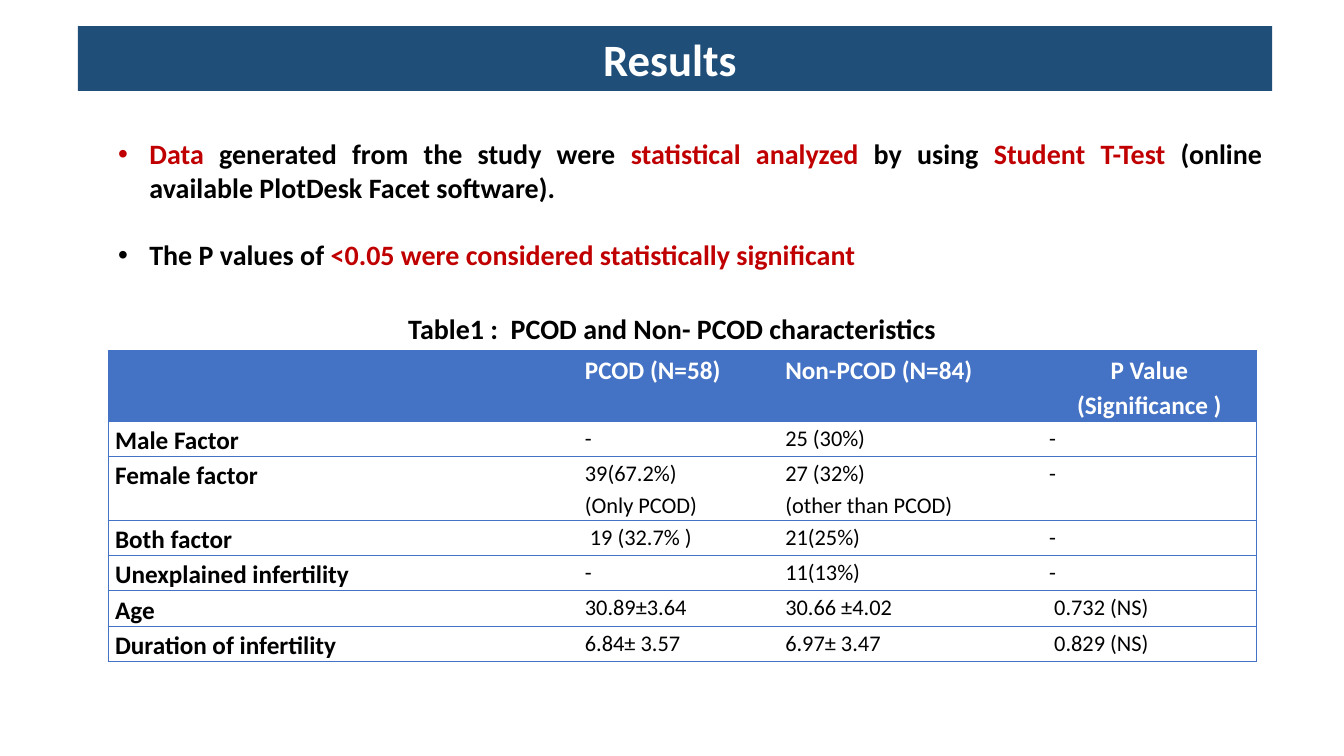
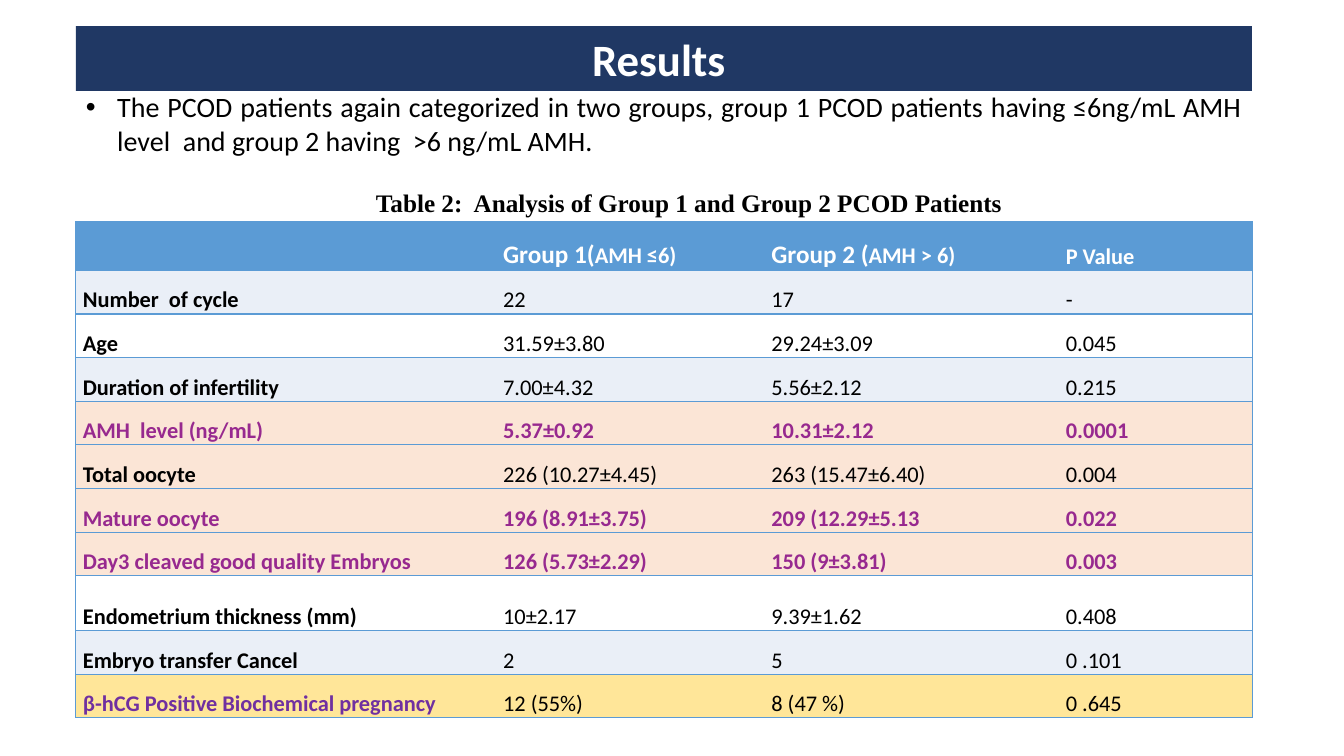
from lxml import etree
from pptx import Presentation
from pptx.dml import color as colors
from pptx.enum import text as text_enum
from pptx.oxml import ns
from pptx.util import Cm, Pt

# Shared look
FONT = "Calibri"
BLACK, WHITE, RED = "000000", "FFFFFF", "C00000"
PURPLE, VIOLET = "97298F", "7030A0"
PALE_BLUE, PEACH, YELLOW = "EAEFF7", "FBE5D6", "FFE699"
BLUE, SKY = "4472C4", "5B9BD5"
PLAIN_TABLE_STYLE = "{2D5ABB26-0587-4C30-8999-92F81FD0307C}"
ALIGN, ANCHOR = text_enum.PP_ALIGN, text_enum.MSO_ANCHOR
BULLET_INDENT = Cm(0.79)

# Table 1: row height in cm, cell texts
FACTOR_ROWS = [
    (1.78, ["", "PCOD (N=58)", "Non-PCOD (N=84)", "P Value (Significance )"]),
    (0.89, ["Male Factor", "-", "25 (30%)", "-"]),
    (1.6, ["Female factor", "39(67.2%)\n(Only PCOD)", "27 (32%)\n(other than PCOD)", "-"]),
    (0.89, ["Both factor", " 19 (32.7% )", "21(25%)", "-"]),
    (0.89, ["Unexplained infertility", "-", "11(13%)", "-"]),
    (0.89, ["Age", "30.89±3.64", "30.66 ±4.02", " 0.732 (NS)"]),
    (0.89, ["Duration of infertility", "6.84± 3.57", "6.97± 3.47", " 0.829 (NS)"]),
]

# Table 2: fill, label colour, whether the values follow the label, cell texts
GROUP_ROWS = [
    (PALE_BLUE, BLACK, False, ["Number  of cycle", "22", "17", "-"]),
    (WHITE, BLACK, False, ["Age", "31.59±3.80", "29.24±3.09", "0.045"]),
    (PALE_BLUE, BLACK, False, ["Duration of infertility", "7.00±4.32", "5.56±2.12", "0.215"]),
    (PEACH, PURPLE, True, ["AMH  level (ng/mL)", "5.37±0.92", "10.31±2.12", "0.0001"]),
    (PEACH, BLACK, False, ["Total oocyte", "226 (10.27±4.45)", "263 (15.47±6.40)", "0.004"]),
    (PEACH, PURPLE, True, ["Mature oocyte", "196 (8.91±3.75)", "209 (12.29±5.13", "0.022"]),
    (PEACH, PURPLE, True, ["Day3 cleaved good quality Embryos", "126 (5.73±2.29)",
                           "150 (9±3.81)", "0.003"]),
    (WHITE, BLACK, False, ["Endometrium thickness (mm)", "10±2.17", "9.39±1.62", "0.408"]),
    (PALE_BLUE, BLACK, False, ["Embryo transfer Cancel", "2", "5", "0 .101"]),
    (YELLOW, VIOLET, False, ["β-hCG Positive Biochemical pregnancy", "12 (55%)",
                             "8 (47 %)", "0 .645"]),
]


def set_color(target, value):
    """Colour a fill, or the fill of a font."""
    target.solid()
    target.fore_color.rgb = colors.RGBColor.from_string(value)


def add_text(paragraph, text, size=20, color=BLACK, bold=False, font=FONT):
    run = paragraph.add_run()
    run.text = text
    run.font.name, run.font.size, run.font.bold = font, Pt(size), bold
    set_color(run.font.fill, color)


def place(shape, left, top, width, height):
    shape.left, shape.top = Cm(left), Cm(top)
    shape.width, shape.height = Cm(width), Cm(height)


def add_title_band(slide, text, left, width, fill):
    title = slide.shapes.title
    place(title, left, 0.66, width, 1.63)
    set_color(title.fill, fill)
    frame = title.text_frame
    frame.auto_size = text_enum.MSO_AUTO_SIZE.NONE
    frame.vertical_anchor = ANCHOR.MIDDLE
    frame.paragraphs[0].alignment = ALIGN.CENTER
    add_text(frame.paragraphs[0], text, size=32, color=WHITE, bold=True)


def add_bullets(slide, box, bullets, gap=0):
    """Fill the body; each bullet is a list of (text, format) runs."""
    body = slide.placeholders[1]
    place(body, *box)
    frame = body.text_frame
    frame.auto_size = text_enum.MSO_AUTO_SIZE.NONE
    frame.margin_top = 0
    for index, runs in enumerate(bullets):
        paragraph = frame.add_paragraph() if index else frame.paragraphs[0]
        paragraph.alignment = ALIGN.JUSTIFY
        paragraph.space_before = Pt(gap if index else 0)
        properties = paragraph._p.get_or_add_pPr()
        properties.set("marL", str(BULLET_INDENT))
        properties.set("indent", str(-BULLET_INDENT))
        for text, style in runs:
            add_text(paragraph, text, **style)


def add_caption(slide, box, text, **style):
    caption = slide.shapes.add_textbox(*(Cm(value) for value in box))
    frame = caption.text_frame
    frame.word_wrap = True
    frame.vertical_anchor = ANCHOR.MIDDLE
    frame.paragraphs[0].alignment = ALIGN.CENTER
    add_text(frame.paragraphs[0], text, bold=True, **style)


def add_border(cell, side, color, width):
    line = etree.SubElement(cell._tc.get_or_add_tcPr(), ns.qn("a:ln" + side), w=str(Pt(width)))
    fill = etree.SubElement(line, ns.qn("a:solidFill"))
    etree.SubElement(fill, ns.qn("a:srgbClr"), val=color)


def fill_cell(cell, runs, fill, anchor, alignment):
    """Write (text, format) runs; a line feed starts a new paragraph."""
    cell.margin_left = cell.margin_right = Cm(0.18)
    cell.margin_top = cell.margin_bottom = 0
    cell.vertical_anchor = anchor
    if fill:
        set_color(cell.fill, fill)
    else:
        cell.fill.background()
    frame = cell.text_frame
    paragraph = frame.paragraphs[0]
    for text, style in runs:
        for index, line in enumerate(text.split("\n")):
            if index:
                paragraph = frame.add_paragraph()
            if line:
                add_text(paragraph, line, **style)
    for paragraph in frame.paragraphs:
        paragraph.alignment, paragraph.line_spacing = alignment, 1.15


def add_grid(slide, left, top, widths, rows, border, anchor=ANCHOR.TOP, centred=()):
    """Add a table from rows of (height, fill, cells); border is (colour, points)."""
    heights = [row[0] for row in rows]
    frame = slide.shapes.add_table(len(rows), len(widths), Cm(left), Cm(top),
                                   Cm(sum(widths)), Cm(sum(heights)))
    table = frame.table
    table._tbl.tblPr.find(ns.qn("a:tableStyleId")).text = PLAIN_TABLE_STYLE
    for column, width in zip(table.columns, widths):
        column.width = Cm(width)
    last = len(widths) - 1
    for row_index, (height, fill, cells) in enumerate(rows):
        table.rows[row_index].height = Cm(height)
        for column_index, runs in enumerate(cells):
            cell = table.cell(row_index, column_index)
            sides = "L" * (column_index == 0) + "R" * (column_index == last) + "TB"
            for side in sides:
                add_border(cell, side, *border)
            is_centred = (row_index, column_index) in centred
            fill_cell(cell, runs, fill, anchor, ALIGN.CENTER if is_centred else ALIGN.JUSTIFY)


def factor_table_rows():
    label, value = dict(size=18, bold=True), dict(size=16)
    header = dict(label, color=WHITE)
    rows = []
    for index, (height, texts) in enumerate(FACTOR_ROWS):
        styles = [label] + [value] * 3 if index else [header] * 4
        cells = [[(text, style)] for text, style in zip(texts, styles)]
        rows.append((height, None if index else BLUE, cells))
    return rows


def group_table_rows():
    large = dict(size=18, color=WHITE, bold=True)
    small = dict(large, size=16)
    header = [[], [("Group 1(", large), ("AMH ≤6) ", small)],
              [("Group 2 (", large), ("AMH > 6)", small)], [("P Value", small)]]
    rows = [(1.22, SKY, header)]
    for fill, color, highlighted, texts in GROUP_ROWS:
        label = dict(size=16, color=color, bold=True)
        value = label if highlighted else dict(size=16)
        cells = [[(text, value if index else label)] for index, text in enumerate(texts)]
        height = 1.38 if texts[0].startswith("Endometrium") else 1.1
        rows.append((height, fill, cells))
    return rows


def build_characteristics(slide):
    black, red = dict(bold=True), dict(bold=True, color=RED)
    add_title_band(slide, "Results ", 1.96, 30.1, "1F4E79")
    add_bullets(slide, (2.72, 3.45, 29.34, 3.6), [
        [("Data ", red), ("generated from the study were ", black),
         ("statistical analyzed ", red), ("by using ", black), ("Student T-Test ", red),
         ("(online available PlotDesk Facet software). ", black)],
        [("The P values of ", black),
         ("<0.05 were considered statistically significant", red)],
    ], gap=24)
    add_caption(slide, (6.3, 7.72, 21.44, 1.12),
                "Table1 :  PCOD and Non- PCOD characteristics ")
    add_grid(slide, 2.72, 8.83, [11.84, 5.05, 6.65, 5.41], factor_table_rows(),
             (BLUE, 0.5), centred=[(0, 3)])


def build_groups(slide):
    add_title_band(slide, "Results ", 1.91, 29.64, "203864")
    add_bullets(slide, (1.91, 2.26, 29.64, 1.9), [
        [("The PCOD patients again categorized in two groups, group 1 PCOD patients having "
          "≤6ng/mL AMH level  and group 2 having  >6 ng/mL AMH.", {})],
    ])
    add_caption(slide, (3.18, 4.55, 28.37, 1.12),
                "Table 2:  Analysis of Group 1 and Group 2 PCOD Patients",
                size=18, font="Times New Roman")
    add_grid(slide, 1.91, 5.59, [10.59, 6.76, 7.42, 4.88], group_table_rows(),
             (SKY, 1), anchor=ANCHOR.BOTTOM)


def main():
    presentation = Presentation()
    presentation.slide_width, presentation.slide_height = Cm(33.87), Cm(19.05)
    for build in (build_characteristics, build_groups):
        build(presentation.slides.add_slide(presentation.slide_layouts[1]))
    presentation.save("out.pptx")


if __name__ == "__main__":
    main()
